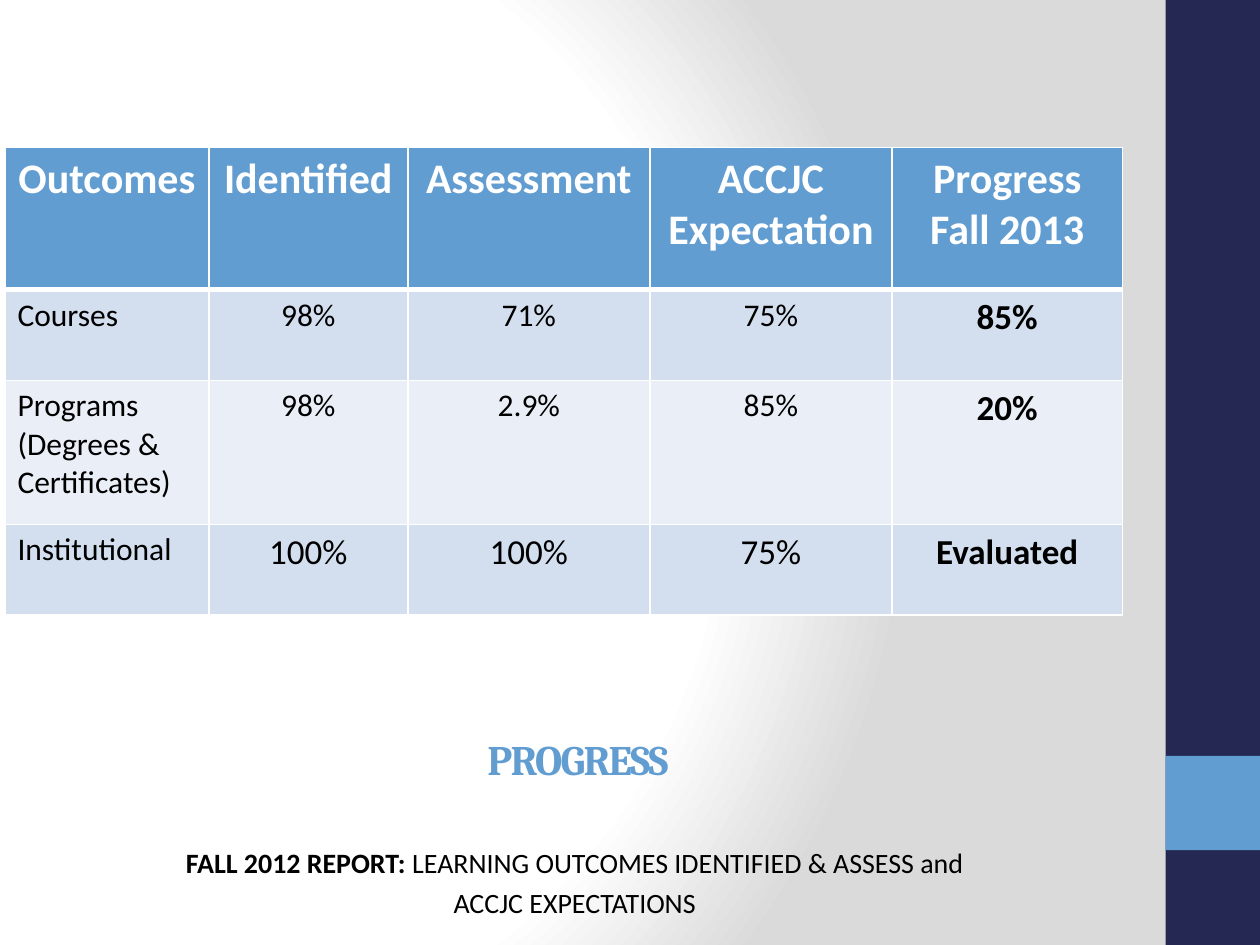
from pptx import Presentation
from pptx.dml.color import RGBColor
from pptx.enum.shapes import MSO_SHAPE
from pptx.enum.text import MSO_ANCHOR, PP_ALIGN
from pptx.oxml import parse_xml
from pptx.oxml.ns import nsdecls
from pptx.util import Cm, Pt

RECT = MSO_SHAPE.RECTANGLE
LEFT, CENTER = PP_ALIGN.LEFT, PP_ALIGN.CENTER
TOP, BOTTOM = MSO_ANCHOR.TOP, MSO_ANCHOR.BOTTOM

NAVY, BLUE, WHITE, BLACK = "242852", "629DD1", "FFFFFF", "000000"
BANDS = ("D3DFEE", "EAEFF7")
STOPS = ((0, WHITE), (75, WHITE), (100, "DADADA"))

COLS = (4.11, 4.01, 4.88, 4.88, 4.65)
ROWS = (2.87, 1.83, 2.9, 1.83)
HEADS = ("Outcomes", "Identified", "Assessment", "ACCJC Expectation",
         "Progress\nFall 2013")
# Each row: cell texts, then the size of the middle columns
BODY = (
    (("Courses", "98%", "71%", "75%", "85%"), 18),
    (("Programs\n(Degrees &\nCertificates)", "98%", "2.9%", "85%", "20%"), 18),
    (("Institutional", "100%", "100%", "75%", "Evaluated"), 20),
)


def color(code):
    return RGBColor.from_string(code)


def add_run(para, text, size, code, bold=False, face="Calibri"):
    """Add text to a paragraph, with a line break at each newline."""
    for i, part in enumerate(text.split("\n")):
        if i:
            para.add_line_break()
        run = para.add_run()
        run.text = part
        font = run.font
        font.name, font.size, font.bold = face, Pt(size), bold
        font.color.rgb = color(code)
    return run


def paint_back(slide):
    stops = "".join(
        f'<a:gs pos="{pos * 1000}"><a:srgbClr val="{code}"/></a:gs>'
        for pos, code in STOPS)
    slide.element.cSld.insert(0, parse_xml(
        f'<p:bg {nsdecls("p", "a")}><p:bgPr><a:gradFill rotWithShape="1">'
        f'<a:gsLst>{stops}</a:gsLst><a:path path="circle">'
        '<a:fillToRect l="20000" t="50000" r="100000" b="50000"/>'
        '</a:path></a:gradFill><a:effectLst/></p:bgPr></p:bg>'))


def add_band(slide, left, top, width, height):
    """Draw the side band, with a square set on it at four fifths."""
    parts = ((top, height, NAVY), (top + height * 0.8, width, BLUE))
    for y, tall, code in parts:
        shape = slide.shapes.add_shape(RECT, Cm(left), Cm(y),
                                       Cm(width), Cm(tall))
        shape.shadow.inherit = False
        shape.fill.solid()
        shape.fill.fore_color.rgb = color(code)
        shape.line.fill.background()


def set_edges(cell, **widths):
    """Give a cell white borders; widths are points by side L, R, T, B."""
    props = cell._tc.get_or_add_tcPr()
    for i, side in enumerate("LRTB"):
        width = Pt(widths.get(side, 1))
        props.insert(i, parse_xml(
            f'<a:ln{side} {nsdecls("a")} w="{width}"><a:solidFill>'
            f'<a:srgbClr val="{WHITE}"/></a:solidFill></a:ln{side}>'))


def fill_cell(cell, text, size, code, bold, align, back):
    cell.fill.solid()
    cell.fill.fore_color.rgb = color(back)
    para = cell.text_frame.paragraphs[0]
    para.alignment = align
    add_run(para, text, size, code, bold)


def add_grid(slide, left, top, width, height):
    table = slide.shapes.add_table(len(ROWS), len(COLS), Cm(left), Cm(top),
                                   Cm(width), Cm(height)).table
    table.horz_banding = False
    for col, wide in zip(table.columns, COLS):
        col.width = Cm(wide)
    for row, tall in zip(table.rows, ROWS):
        row.height = Cm(tall)

    for c, text in enumerate(HEADS):
        cell = table.cell(0, c)
        fill_cell(cell, text, 24, WHITE, True, CENTER, BLUE)
        set_edges(cell, B=3)

    last = len(COLS) - 1
    for r, (texts, mid) in enumerate(BODY, 1):
        for c, text in enumerate(texts):
            cell = table.cell(r, c)
            size = 18 if c == 0 else 20 if c == last else mid
            fill_cell(cell, text, size, BLACK, c == last,
                      CENTER if c else LEFT, BANDS[(r - 1) % 2])
            set_edges(cell, T=3 if r == 1 else 1)


def add_frame(slide, left, top, width, height, anchor):
    box = slide.shapes.add_textbox(Cm(left), Cm(top), Cm(width), Cm(height))
    frame = box.text_frame
    frame.word_wrap = True
    frame.vertical_anchor = anchor
    frame.paragraphs[0].alignment = CENTER
    return frame


def add_title(slide, left, top, width, height):
    frame = add_frame(slide, left, top, width, height, BOTTOM)
    frame.margin_bottom = Cm(1.12)
    run = add_run(frame.paragraphs[0], "PROGRESS", 24, BLUE, True, "Cambria")
    run.font._element.set("spc", "-100")


def add_note(slide, left, top, width, height):
    frame = add_frame(slide, left, top, width, height, TOP)
    para = frame.paragraphs[0]
    add_run(para, "FALL 2012 REPORT: ", 16, BLACK, True)
    add_run(para, "LEARNING OUTCOMES IDENTIFIED & ASSESS and ", 16, BLACK)
    para = frame.add_paragraph()
    para.alignment = CENTER
    para.space_before = Pt(3.2)
    add_run(para, "ACCJC EXPECTATIONS ", 16, BLACK)


def main():
    deck = Presentation()
    deck.slide_width, deck.slide_height = Cm(25.4), Cm(19.05)
    slide = deck.slides.add_slide(deck.slide_layouts[6])
    paint_back(slide)
    add_band(slide, 23.5, 0, 1.9, 19.05)
    add_grid(slide, 0.1, 2.97, sum(COLS), sum(ROWS))
    add_title(slide, 0.85, 15.27, 21.6, 1.65)
    add_note(slide, 0.85, 16.93, 21.6, 1.7)
    deck.save("out.pptx")


if __name__ == "__main__":
    main()
